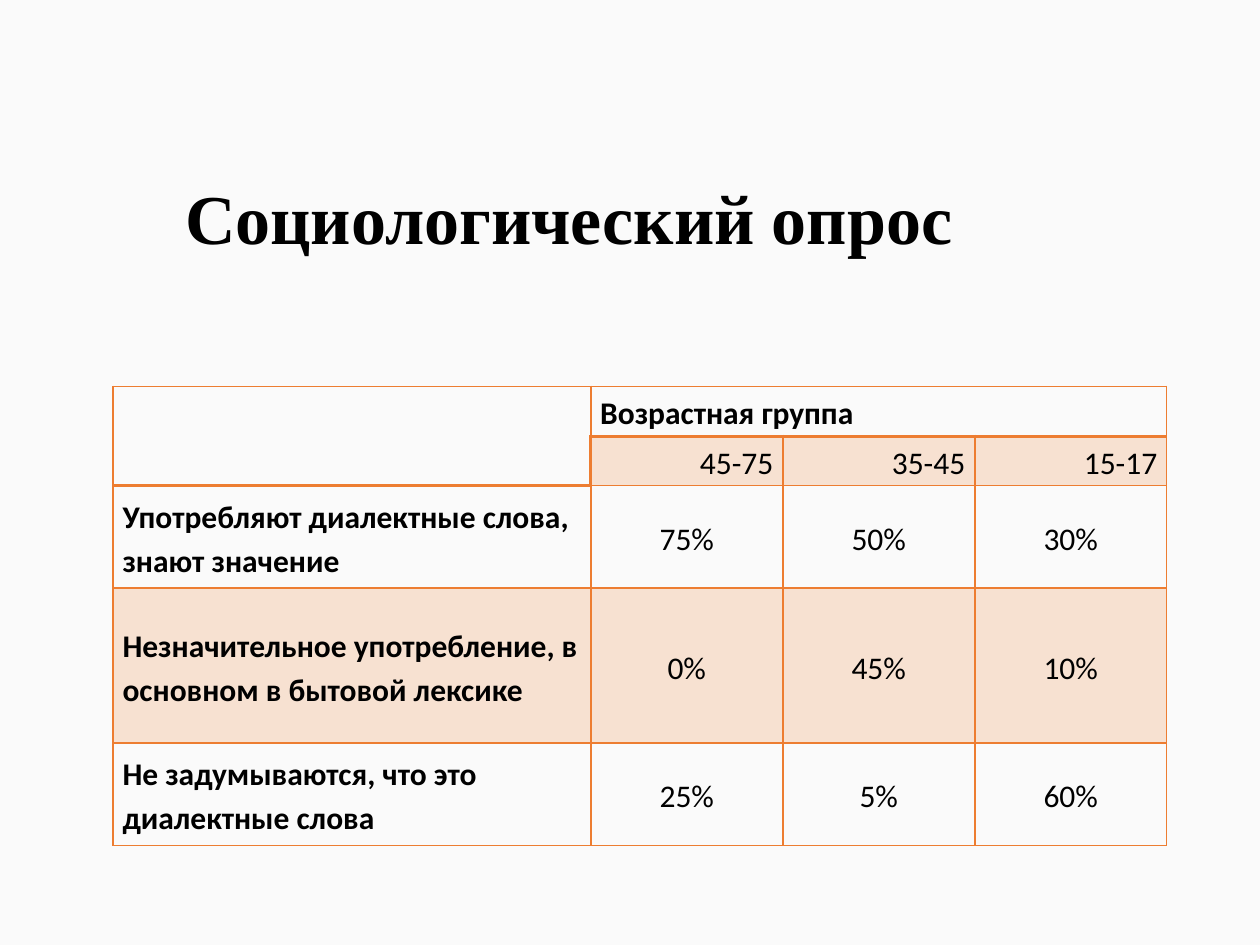
from typing import NamedTuple

from lxml import etree
from pptx import Presentation
from pptx.dml.color import RGBColor
from pptx.enum.text import MSO_ANCHOR, PP_ALIGN
from pptx.oxml.ns import qn
from pptx.util import Cm, Pt

LEFT, CENTER, RIGHT = PP_ALIGN.LEFT, PP_ALIGN.CENTER, PP_ALIGN.RIGHT
TOP, MIDDLE = MSO_ANCHOR.TOP, MSO_ANCHOR.MIDDLE

BACKGROUND = RGBColor(0xFA, 0xFA, 0xFA)
BLACK = RGBColor(0, 0, 0)
ORANGE = RGBColor(0xED, 0x7D, 0x31)
BAND_ALPHA = 20

COL_WIDTHS = [Cm(9.63)] + [Cm(3.87)] * 3
THIN, THICK = Pt(1), Pt(2)


class Row(NamedTuple):
    height: int
    label: str
    values: list[str]
    align: PP_ALIGN = CENTER
    bold: bool = False
    banded: tuple[int, ...] = ()


ROWS = [
    Row(Cm(1), "", ["Возрастная группа", "", ""], LEFT, True),
    Row(Cm(1), "", ["45-75", "35-45", "15-17"], RIGHT, banded=(1, 2, 3)),
    Row(Cm(2.06), "Употребляют диалектные слова, знают значение", ["75%", "50%", "30%"]),
    Row(Cm(3.13), "Незначительное употребление, в основном в бытовой лексике",
        ["0%", "45%", "10%"], banded=(0, 1, 2, 3)),
    Row(Cm(2.06), "Не задумываются, что это диалектные слова", ["25%", "5%", "60%"]),
]


def set_attrs(obj, **values) -> None:
    for name, value in values.items():
        setattr(obj, name, value)


def write(tf, text: str, align: PP_ALIGN, spacing: float, **font) -> None:
    p = tf.paragraphs[0]
    set_attrs(p, alignment=align, line_spacing=spacing)
    r = p.add_run()
    r.text = text
    r.font.color.rgb = BLACK
    set_attrs(r.font, **font)


def set_borders(cell, widths: dict[str, int]) -> None:
    """Insert the border lines, which must precede the cell fill."""
    tc_pr = cell._tc.get_or_add_tcPr()
    for i, (side, width) in enumerate(widths.items()):
        ln = etree.Element(qn(f"a:ln{side}"), w=str(int(width)))
        fill = etree.SubElement(ln, qn("a:solidFill"))
        etree.SubElement(fill, qn("a:srgbClr"), val=str(ORANGE))
        tc_pr.insert(i, ln)


def fill_cell(cell, banded: bool) -> None:
    if not banded:
        cell.fill.background()
        return
    cell.fill.solid()
    cell.fill.fore_color.rgb = ORANGE
    color = cell._tc.tcPr.find(f"{qn('a:solidFill')}/{qn('a:srgbClr')}")
    etree.SubElement(color, qn("a:alpha"), val=str(BAND_ALPHA * 1000))


def border_widths(row: int, col: int) -> dict[str, int]:
    """Thick lines run below the header cells and left of the first age group."""
    header_end = 2 if col == 0 else 1
    return {
        "L": THICK if (row, col) == (1, 1) else THIN,
        "R": THICK if (row, col) == (1, 0) else THIN,
        "T": THICK if row == header_end else THIN,
        "B": THICK if row == header_end - 1 else THIN,
    }


def add_survey_table(s) -> None:
    table = s.shapes.add_table(len(ROWS), len(COL_WIDTHS), Cm(2.28), Cm(7.79),
                               sum(COL_WIDTHS), sum(row.height for row in ROWS)).table
    set_attrs(table, first_row=False, horz_banding=False)
    for column, width in zip(table.columns, COL_WIDTHS):
        column.width = width
    for i, row in enumerate(ROWS):
        table.rows[i].height = row.height
        for j, text in enumerate([row.label, *row.values]):
            cell = table.cell(i, j)
            set_attrs(cell, vertical_anchor=MIDDLE, margin_left=Cm(0.19),
                      margin_right=Cm(0.19), margin_top=0, margin_bottom=0)
            fill_cell(cell, j in row.banded)
            set_borders(cell, border_widths(i, j))
            if text:
                write(cell.text_frame, text, row.align if j else LEFT, 1.15,
                      name="Calibri", size=Pt(18), bold=row.bold or j == 0)
    table.cell(0, 0).merge(table.cell(1, 0))
    table.cell(0, 1).merge(table.cell(0, 3))


def add_title(s) -> None:
    title = s.shapes.title
    set_attrs(title, left=Cm(3.48), top=Cm(3.45), width=Cm(22.38), height=Cm(3))
    tf = title.text_frame
    set_attrs(tf, vertical_anchor=TOP, word_wrap=True, margin_top=Cm(0.25))
    write(tf, "Социологический опрос", LEFT, 0.9,
          name="Times New Roman", size=Pt(40), bold=True)


def main() -> None:
    prs = Presentation()
    set_attrs(prs, slide_width=Cm(25.4), slide_height=Cm(19.05))
    s = prs.slides.add_slide(prs.slide_layouts[5])
    s.background.fill.solid()
    s.background.fill.fore_color.rgb = BACKGROUND
    add_survey_table(s)
    add_title(s)
    prs.save("out.pptx")


if __name__ == "__main__":
    main()
